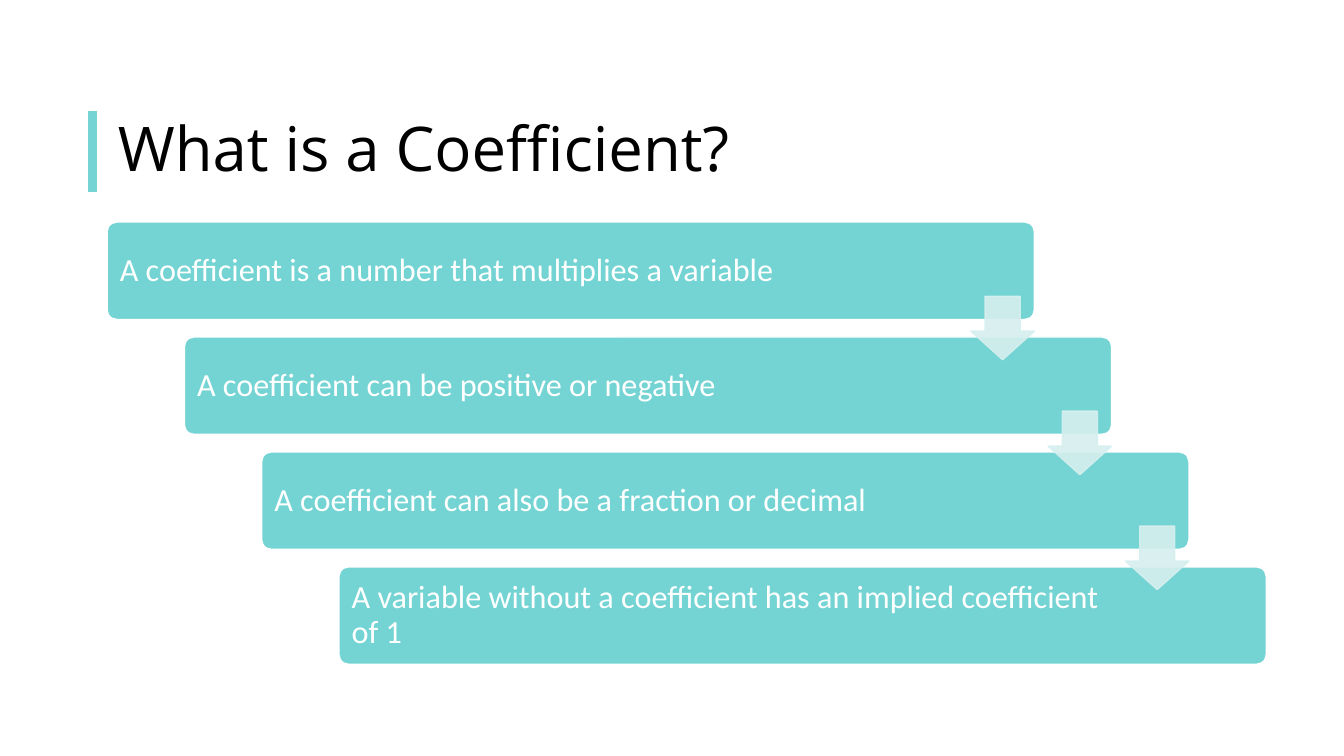
from lxml.etree import SubElement
from pptx import Presentation
from pptx.dml.color import RGBColor
from pptx.enum.shapes import MSO_CONNECTOR, MSO_SHAPE
from pptx.enum.text import MSO_ANCHOR, MSO_AUTO_SIZE, PP_ALIGN
from pptx.oxml.ns import qn
from pptx.util import Pt

COLOURS = {
    "accent": "76D5D4",
    "step": "74D4D3",
    "arrow": "D6EFEF",
    "white": "FFFFFF",
    "title": "000000",
}
STEPS = [
    "A coefficient is a number that multiplies a variable",
    "A coefficient can be positive or negative",
    "A coefficient can also be a fraction or decimal",
    "A variable without a coefficient has an implied coefficient of 1",
]


def colour(name):
    return RGBColor.from_string(COLOURS[name])


def write(frame, text, font, size, ink):
    frame.word_wrap = True
    frame.auto_size = MSO_AUTO_SIZE.NONE
    frame.vertical_anchor = MSO_ANCHOR.MIDDLE
    paragraph = frame.paragraphs[0]
    paragraph.alignment = PP_ALIGN.LEFT
    paragraph.line_spacing = 0.9
    run = paragraph.add_run()
    run.text = text
    run.font.name = font
    run.font.size = Pt(size)
    run.font.color.rgb = colour(ink)


def add_block(slide, kind, left, top, width, height, fill, line):
    block = slide.shapes.add_shape(kind, Pt(left), Pt(top), Pt(width), Pt(height))
    block.shadow.inherit = False
    block.fill.solid()
    block.fill.fore_color.rgb = colour(fill)
    block.line.color.rgb = colour(line)
    block.line.width = Pt(1)
    return block


def add_heading(slide, left, top, width, height):
    rule = slide.shapes.add_connector(
        MSO_CONNECTOR.STRAIGHT, Pt(left), Pt(top), Pt(left), Pt(top + height))
    rule.line.color.rgb = colour("accent")
    rule.line.width = Pt(6)
    SubElement(rule.element.spPr, qn("a:effectLst"))

    title = slide.shapes.title
    title.left, title.top = Pt(left + 10.8), Pt(top)
    title.width, title.height = Pt(width - 10.8), Pt(height)
    write(title.text_frame, "What is a Coefficient?", "Open Sans", 44, "title")


def add_staircase(slide, left, top, width, height):
    bar_width, bar_height, arrow_size = 662.4, 69.6, 45.4
    gaps = len(STEPS) - 1
    step_x = (width - bar_width) / gaps
    step_y = (height - bar_height) / gaps
    places = [(left + i * step_x, top + i * step_y) for i in range(len(STEPS))]

    for text, (x, y) in zip(STEPS, places):
        bar = add_block(slide, MSO_SHAPE.ROUNDED_RECTANGLE, x, y,
                        bar_width, bar_height, "step", "white")
        bar.adjustments[0] = 0.1
        bar.text_frame.margin_left = Pt(7.2)
        bar.text_frame.margin_right = Pt(107)
        write(bar.text_frame, text, "Calibri", 23, "white")

    for x, y in places[:-1]:
        arrow = add_block(slide, MSO_SHAPE.DOWN_ARROW, x + bar_width - arrow_size,
                          y + 53, arrow_size, arrow_size, "arrow", "arrow")
        arrow.adjustments[0] = 0.55
        arrow.adjustments[1] = 0.45
        for tint in arrow.element.spPr.iter(qn("a:srgbClr")):
            SubElement(tint, qn("a:alpha"), val="90000")


def main():
    deck = Presentation()
    deck.slide_width, deck.slide_height = Pt(960), Pt(540)
    slide = deck.slides.add_slide(deck.slide_layouts[5])
    add_heading(slide, 66.24, 79.2, 838.8, 57.6)
    add_staircase(slide, 76.5, 158.6, 828, 315.9)
    deck.save("out.pptx")


if __name__ == "__main__":
    main()
